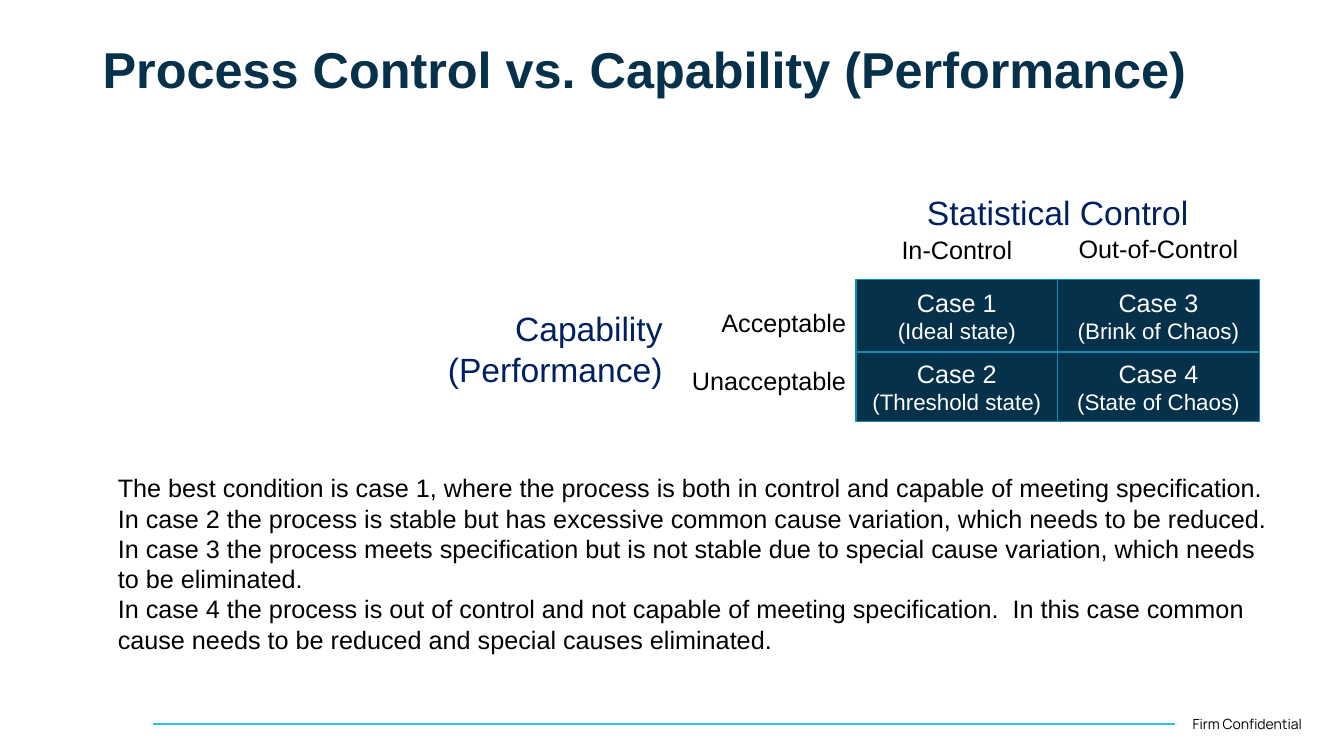
from pptx import Presentation
from pptx.dml.color import RGBColor
from pptx.enum.shapes import MSO_CONNECTOR, MSO_SHAPE
from pptx.enum.text import MSO_ANCHOR, PP_ALIGN
from pptx.oxml.ns import qn
from pptx.util import Inches, Pt
from lxml import etree

LEFT, MID, RIGHT = PP_ALIGN.LEFT, PP_ALIGN.CENTER, PP_ALIGN.RIGHT
TOP, CENTER = MSO_ANCHOR.TOP, MSO_ANCHOR.MIDDLE
RECT, STRAIGHT = MSO_SHAPE.RECTANGLE, MSO_CONNECTOR.STRAIGHT

NAVY = RGBColor(0x05, 0x31, 0x4A)
INDIGO = RGBColor(0x00, 0x20, 0x60)
TEAL = RGBColor(0x0F, 0x8C, 0xB2)
SKY = RGBColor(0x30, 0xBF, 0xEF)
BLACK = RGBColor(0, 0, 0)
WHITE = RGBColor(255, 255, 255)

TITLE = "Process Control vs. Capability (Performance)"
FOOTER = "Firm Confidential"
ACROSS = "Statistical Control"
DOWN = ["Capability", "(Performance)"]
COLS = [("In-Control", 2.28, 1.31), ("Out-of-Control", 2.27, 1.8)]
ROWS = [("Acceptable", 3, 1.45), ("Unacceptable", 3.58, 1.74)]
CASES = [
    [("Case 1", "(Ideal state)"), ("Case 3", "(Brink of Chaos)")],
    [("Case 2", "(Threshold state)"), ("Case 4", "(State of Chaos)")],
]
NOTES = [
    "The best condition is case 1, where the process is both in control and capable of meeting specification.",
    "In case 2 the process is stable but has excessive common cause variation, which needs to be reduced.",
    "In case 3 the process meets specification but is not stable due to special cause variation, which needs to be eliminated.",
    "In case 4 the process is out of control and not capable of meeting specification.  In this case common cause needs to be reduced and special causes eliminated.",
]

GRID_X, GRID_Y, COL_W = 8.49, 2.77, 2
ROW_H = [0.72, 0.69]
LABEL_H = 0.4

deck = Presentation()
deck.slide_width, deck.slide_height = Inches(13.33), Inches(7.5)
slide = deck.slides.add_slide(deck.slide_layouts[6])


def write(shape, lines, sizes, color, align=LEFT, anchor=TOP, wrap=True, face="Arial"):
    frame = shape.text_frame
    frame.word_wrap = wrap
    frame.vertical_anchor = anchor
    frame.text = "\n".join(lines)
    for para, size in zip(frame.paragraphs, sizes):
        para.alignment = align
        para.font.name = face
        para.font.size = Pt(size)
        para.font.color.rgb = color
    return frame


def label(box, lines, size, color, **style):
    shape = slide.shapes.add_textbox(*map(Inches, box))
    return write(shape, lines, [size] * len(lines), color, **style)


def case(box, lines):
    shape = slide.shapes.add_shape(RECT, *map(Inches, box))
    shape.shadow.inherit = False
    shape.fill.solid()
    shape.fill.fore_color.rgb = NAVY
    shape.line.color.rgb = TEAL
    shape.line.width = Pt(1)
    write(shape, lines, [18, 16], WHITE, align=MID, anchor=CENTER)


rule = slide.shapes.add_connector(STRAIGHT, *map(Inches, (1.52, 7.18, 11.65, 7.18)))
rule.line.color.rgb = SKY
rule.line.width = Pt(1.5)
etree.SubElement(rule._element.spPr, qn("a:effectLst"))
label((11.73, 7.05, 1.48, 0.27), [FOOTER], 10, BLACK, face="Manrope")

title = label((0.92, 0.28, 11.5, 0.88), [TITLE], 36, NAVY, anchor=CENTER)
title.paragraphs[0].font.bold = True
title.paragraphs[0].line_spacing = 0.9

for row, pair in enumerate(CASES):
    y = GRID_Y + sum(ROW_H[:row])
    for col, lines in enumerate(pair):
        case((GRID_X + col * COL_W, y, COL_W, ROW_H[row]), lines)

for col, (name, y, width) in enumerate(COLS):
    x = GRID_X + (col + 0.5) * COL_W - width / 2
    label((x, y, width, LABEL_H), [name], 18, BLACK, align=MID, wrap=False)
for name, y, width in ROWS:
    label((GRID_X - width, y, width, LABEL_H), [name], 18, BLACK, align=RIGHT, wrap=False)

label((GRID_X, 1.85, COL_W * len(COLS), 0.5), [ACROSS], 24, INDIGO, align=MID)
label((4.25, 3.01, 2.42, 0.91), DOWN, 24, INDIGO, align=RIGHT)
label((1.07, 4.64, 11.74, 1.92), NOTES, 18, BLACK)

deck.save("out.pptx")
